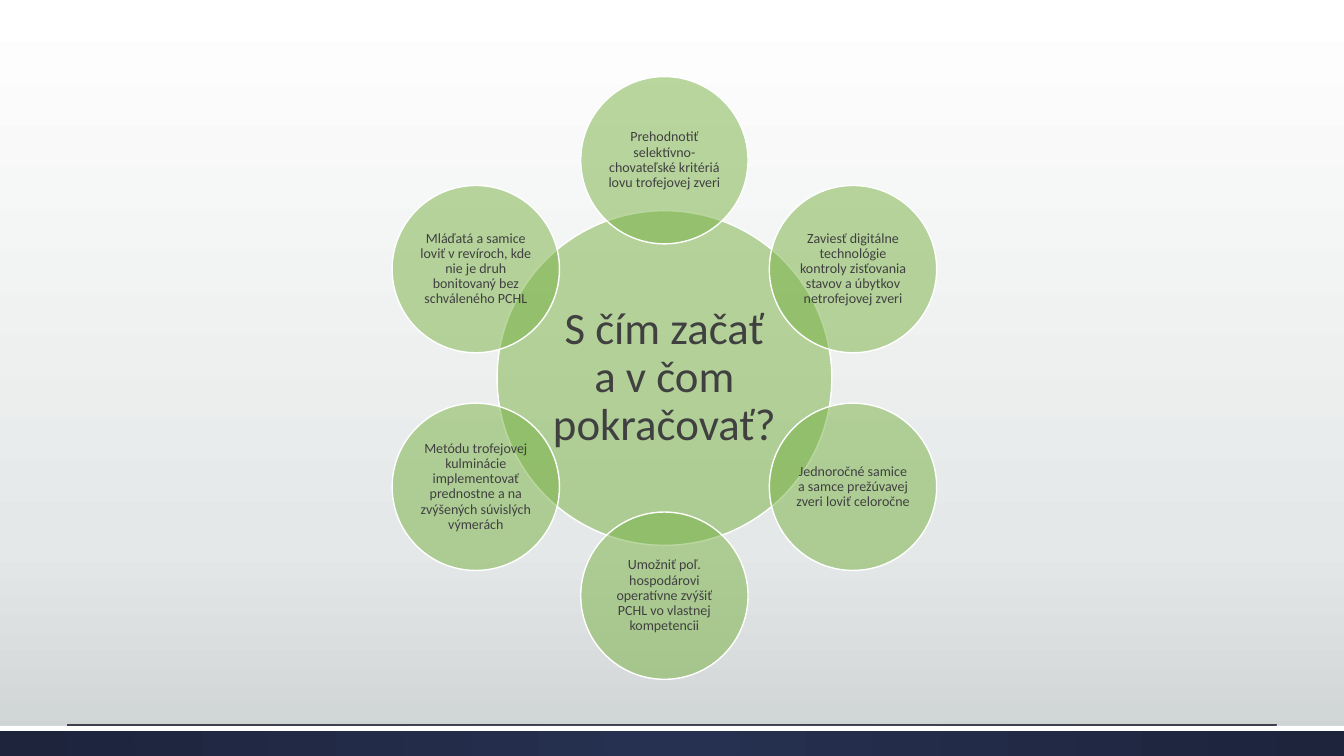
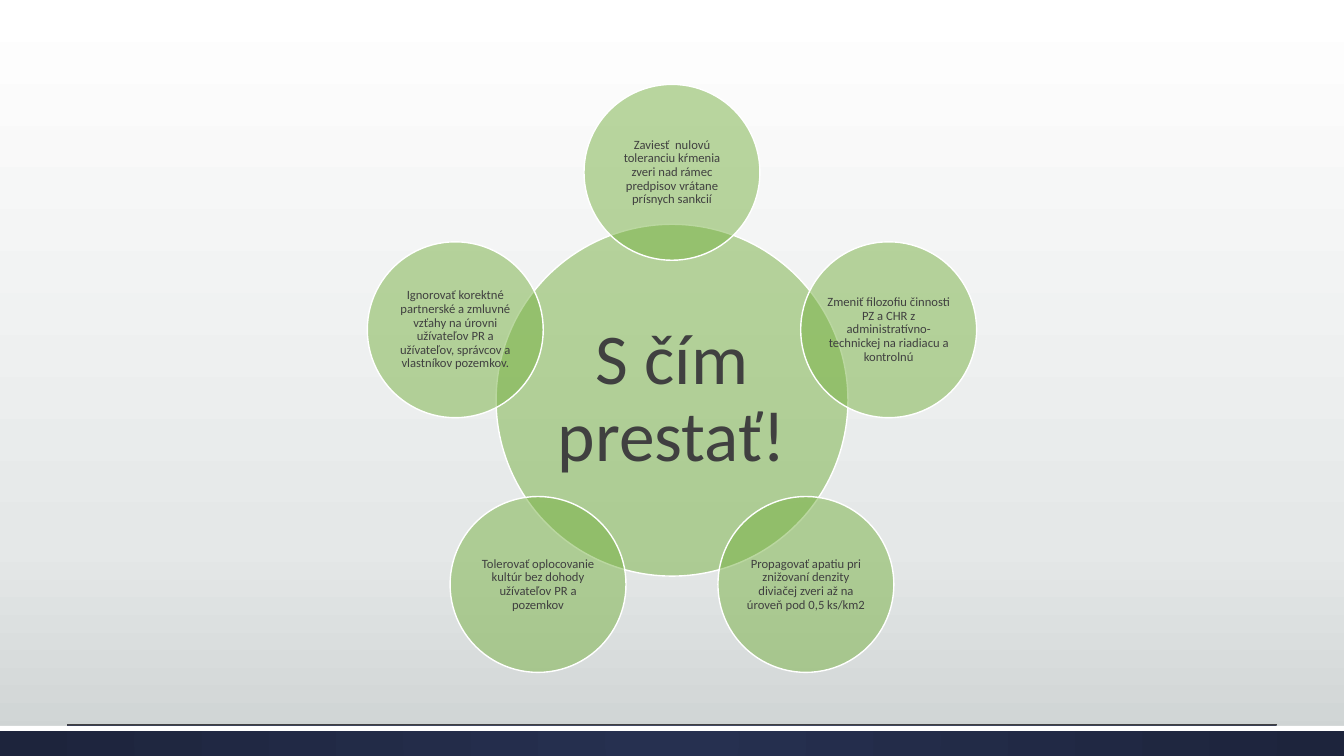
from math import cos, pi, sin

from lxml.etree import SubElement
from pptx import Presentation
from pptx.dml.color import RGBColor
from pptx.enum.shapes import MSO_CONNECTOR, MSO_SHAPE
from pptx.enum.text import MSO_ANCHOR, PP_ALIGN
from pptx.oxml import parse_xml
from pptx.oxml.ns import nsdecls, qn
from pptx.util import Inches, Pt

WHITE = RGBColor(0xFF, 0xFF, 0xFF)
MIST = RGBColor(0xE5, 0xE8, 0xE8)
STONE = RGBColor(0xCD, 0xD2, 0xD2)
NAVY = RGBColor(0x26, 0x30, 0x50)
NIGHT = RGBColor(0x1D, 0x24, 0x3C)
GREEN = RGBColor(0x77, 0xB1, 0x42)
GREY = RGBColor(0x40, 0x40, 0x40)
FONT = "Calibri"
WIDE, HIGH = 13.33, 7.5
DOWN = '<a:lin ang="5400000" scaled="0"/>'
ROUND = ('<a:path path="circle"><a:fillToRect l="50000" t="50000" '
         'r="50000" b="50000"/></a:path>')


def blend(fill, owner, stops, way):
    """Fill with colour stops given as (percent, colour) along a way."""
    fill.gradient()
    old = next(owner.iter(qn("a:gradFill")))
    marks = "".join(f'<a:gs pos="{at * 1000}"><a:srgbClr val="{tint}"/></a:gs>'
                    for at, tint in stops)
    new = parse_xml(f'<a:gradFill {nsdecls("a")} rotWithShape="1">'
                    f'<a:gsLst>{marks}</a:gsLst>{way}</a:gradFill>')
    old.getparent().replace(old, new)


def disc(slide, x, y, size, text, points, inset):
    """Draw a see-through circle centred on x, y with its text inside."""
    shape = slide.shapes.add_shape(
        MSO_SHAPE.OVAL, Inches(x - size / 2), Inches(y - size / 2),
        Inches(size), Inches(size))
    shape.shadow.inherit = False
    shape.fill.solid()
    shape.fill.fore_color.rgb = GREEN
    tint = shape._element.spPr.find(qn("a:solidFill")).find(qn("a:srgbClr"))
    SubElement(tint, qn("a:alpha")).set("val", "50000")
    shape.line.color.rgb = WHITE
    shape.line.width = Pt(1)
    frame = shape.text_frame
    frame.word_wrap = True
    frame.vertical_anchor = MSO_ANCHOR.MIDDLE
    frame.margin_left = frame.margin_right = Inches(inset)
    frame.margin_top = frame.margin_bottom = Inches(inset)
    frame.text = text
    para = frame.paragraphs[0]
    para.alignment = PP_ALIGN.CENTER
    para.line_spacing = 0.9
    para.font.name = FONT
    para.font.size = Pt(points)
    para.font.color.rgb = GREY


# Each wheel: centre, ring radius, hub size, hub text, text sizes, hub inset, rim texts
WHEELS = [
    (6.59, 3.75, 2.16, 3.32, "S čím začať a v čom pokračovať?", 32, 10, 0.04, [
        "Prehodnotiť selektívno-chovateľské kritériá lovu trofejovej zveri",
        "Zaviesť digitálne technológie kontroly zisťovania stavov a úbytkov "
        "netrofejovej zveri",
        "Jednoročné samice a samce prežúvavej zveri loviť celoročne",
        "Umožniť poľ. hospodárovi operatívne zvýšiť PCHL vo vlastnej kompetencii",
        "Metódu trofejovej kulminácie implementovať prednostne a na zvýšených "
        "súvislých výmerách",
        "Mláďatá a samice loviť v revíroch, kde nie je druh bonitovaný bez "
        "schváleného PCHL",
    ]),
    (WIDE / 2, 3.97, 2.26, 3.49, "S čím prestať!", 51, 9, 0.07, [
        "Zaviesť  nulovú toleranciu kŕmenia zveri nad rámec predpisov vrátane "
        "prísnych sankcií",
        "Zmeniť filozofiu činnosti PZ a CHR z administratívno-technickej na "
        "riadiacu a kontrolnú",
        "Propagovať apatiu pri znižovaní denzity diviačej zveri až na úroveň "
        "pod 0,5 ks/km2",
        "Tolerovať oplocovanie kultúr bez dohody užívateľov PR a pozemkov",
        "Ignorovať korektné partnerské a zmluvné vzťahy na úrovni užívateľov PR "
        "a užívateľov, správcov a vlastníkov pozemkov.",
    ]),
]

deck = Presentation()
deck.slide_width, deck.slide_height = Inches(WIDE), Inches(HIGH)
master = deck.slide_master
blend(master.background.fill, master._element,
      [(0, WHITE), (72, MIST), (100, STONE)], DOWN)

for x, y, reach, size, title, large, small, inset, notes in WHEELS:
    slide = deck.slides.add_slide(deck.slide_layouts[6])

    top = HIGH * 0.96
    for depth in (HIGH - top, 0.05):
        band = slide.shapes.add_shape(
            MSO_SHAPE.RECTANGLE, 0, Inches(top), Inches(WIDE), Inches(depth))
        band.shadow.inherit = False
        band.line.fill.background()
        if depth == 0.05:
            band.fill.solid()
            band.fill.fore_color.rgb = WHITE
        else:
            blend(band.fill, band._element, [(0, NAVY), (100, NIGHT)], ROUND)
    rule = slide.shapes.add_connector(
        MSO_CONNECTOR.STRAIGHT, Inches(WIDE * 0.05), Inches(top - 0.01),
        Inches(WIDE * 0.95), Inches(top - 0.01))
    rule.line.color.rgb = GREY
    rule.line.width = Pt(0.75)
    SubElement(rule._element.spPr, qn("a:effectLst"))

    disc(slide, x, y, size, title, large, inset)
    for i, note in enumerate(notes):
        turn = 2 * pi * i / len(notes)
        disc(slide, x + reach * sin(turn), y - reach * cos(turn),
             size / 2, note, small, 0.01)

deck.save("out.pptx")
